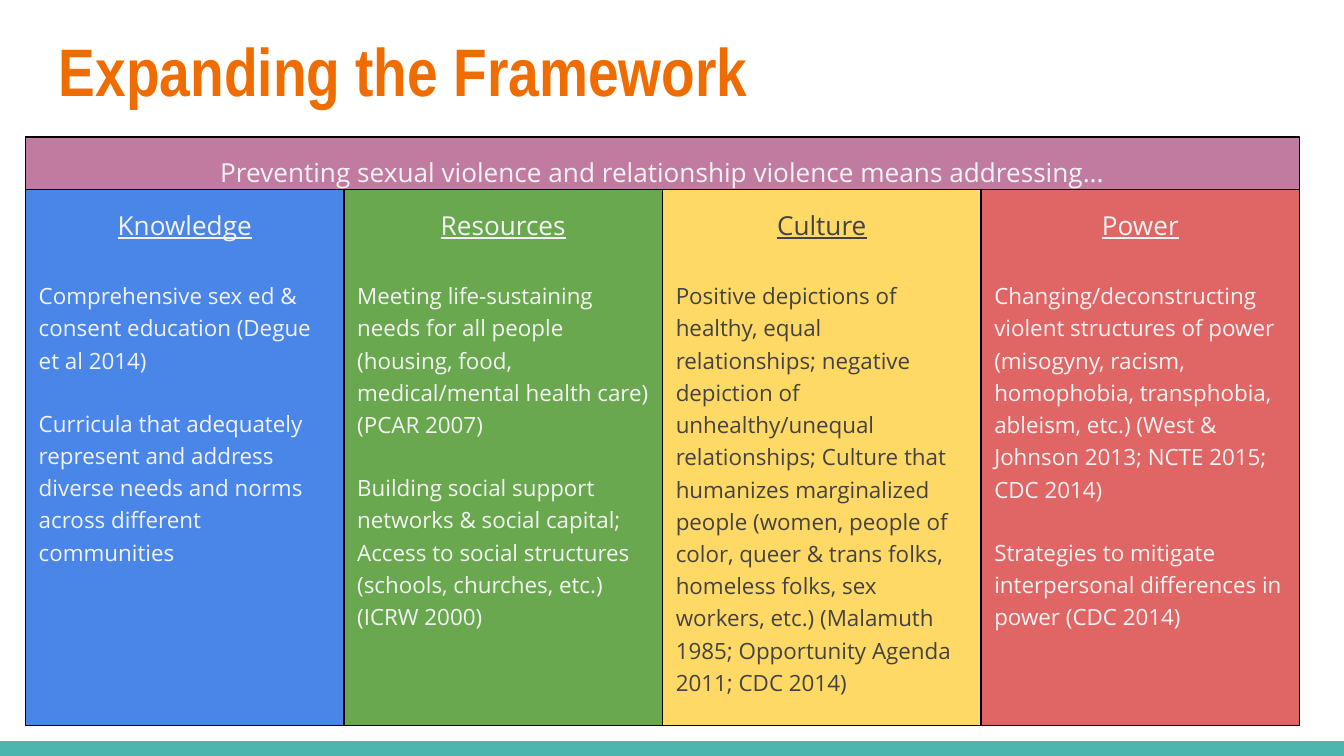
from pptx import Presentation
from pptx.dml.color import RGBColor as RGB
from pptx.enum.shapes import MSO_SHAPE as Shape
from pptx.enum.text import MSO_ANCHOR as Anchor, PP_ALIGN as Align
from pptx.util import Inches, Pt

WHITE = RGB(0xFF, 0xFF, 0xFF)
BLACK = RGB(0x00, 0x00, 0x00)
ORANGE = RGB(0xEF, 0x6C, 0x00)
TEAL = RGB(0x4D, 0xB6, 0xAC)
MAUVE = RGB(0xC2, 0x7B, 0xA0)
BLUE = RGB(0x4A, 0x86, 0xE8)
GREEN = RGB(0x6A, 0xA8, 0x4F)
YELLOW = RGB(0xFF, 0xD9, 0x66)
RED = RGB(0xE0, 0x66, 0x66)
PALE = RGB(0xF3, 0xF3, 0xF3)
DARK = RGB(0x43, 0x43, 0x43)

PAGE_W = 10
PAGE_H = PAGE_W * 9 / 16
FOOT = 0.11
LEFT, TOP, WIDE, HIGH = 0.19, 1.41, 2.37, 3.99
BODY = "Open Sans"

# Heading, fill, text colour, paragraphs
PILLARS = [
    ("Knowledge", BLUE, PALE, [
        "Comprehensive sex ed & consent education (Degue et al 2014)",
        "Curricula that adequately represent and address diverse needs and "
        "norms across different communities"]),
    ("Resources", GREEN, PALE, [
        "Meeting life-sustaining needs for all people (housing, food, "
        "medical/mental health care) (PCAR 2007)",
        "Building social support networks & social capital; Access to social "
        "structures (schools, churches, etc.) (ICRW 2000)"]),
    ("Culture", YELLOW, DARK, [
        "Positive depictions of healthy, equal relationships; negative "
        "depiction of unhealthy/unequal relationships; Culture that humanizes "
        "marginalized people (women, people of color, queer & trans folks, "
        "homeless folks, sex workers, etc.) (Malamuth 1985; Opportunity "
        "Agenda 2011; CDC 2014)"]),
    ("Power", RED, PALE, [
        "Changing/deconstructing violent structures of power (misogyny, "
        "racism, homophobia, transphobia, ableism, etc.) (West & Johnson "
        "2013; NCTE 2015; CDC 2014)",
        "Strategies to mitigate interpersonal differences in power "
        "(CDC 2014)"]),
]


def set_all(item, values):
    for name, value in values.items():
        setattr(item, name, value)


def set_frame(frame):
    edge = Inches(0.1)
    set_all(frame, dict(word_wrap=True, vertical_anchor=Anchor.TOP,
                        margin_left=edge, margin_right=edge,
                        margin_top=edge, margin_bottom=edge))


def add_box(slide, area, fill, lined=True):
    box = slide.shapes.add_shape(Shape.RECTANGLE, *map(Inches, area))
    box.shadow.inherit = False
    box.fill.solid()
    box.fill.fore_color.rgb = fill
    if lined:
        box.line.color.rgb = BLACK
        box.line.width = Pt(0.75)
    else:
        box.line.fill.background()
    set_frame(box.text_frame)
    return box.text_frame


def add_text(frame, text, color, font, first=False, **layout):
    para = frame.paragraphs[0] if first else frame.add_paragraph()
    set_all(para, dict(alignment=Align.LEFT) | layout)
    run = para.add_run()
    run.text = text
    set_all(run.font, font)
    run.font.color.rgb = color


def add_title(slide, text):
    box = slide.shapes.add_textbox(*map(Inches, (0.34, 0.12, 9.32, 0.77)))
    set_frame(box.text_frame)
    add_text(box.text_frame, text, ORANGE,
             dict(name="Arial Narrow", size=Pt(36), bold=True), first=True)


def add_head(frame, text, color, under):
    add_text(frame, text, color,
             dict(name=BODY, size=Pt(14), underline=under),
             first=True, alignment=Align.CENTER, line_spacing=1.2)


def add_pillar(slide, index, head, fill, color, texts):
    frame = add_box(slide, (LEFT + index * WIDE, TOP, WIDE, HIGH), fill)
    add_head(frame, head, color, True)
    for order, text in enumerate(texts):
        gap = Pt(16.5 if order else 19.5)
        add_text(frame, text, color, dict(name=BODY, size=Pt(12)),
                 line_spacing=1.2, space_before=gap)


def main():
    deck = Presentation()
    set_all(deck, dict(slide_width=Inches(PAGE_W),
                       slide_height=Inches(PAGE_H)))
    slide = deck.slides.add_slide(deck.slide_layouts[6])
    slide.background.fill.solid()
    slide.background.fill.fore_color.rgb = WHITE

    # Footer band and title
    add_box(slide, (0, PAGE_H - FOOT, PAGE_W, FOOT), TEAL, lined=False)
    add_title(slide, "Expanding the Framework")

    # Four pillars under a shared banner
    for index, pillar in enumerate(PILLARS):
        add_pillar(slide, index, *pillar)
    banner = add_box(slide, (LEFT, 1.02, WIDE * len(PILLARS), 0.39), MAUVE)
    add_head(banner, "Preventing sexual violence and relationship violence "
             "means addressing...", PALE, False)

    deck.save("out.pptx")


if __name__ == "__main__":
    main()
